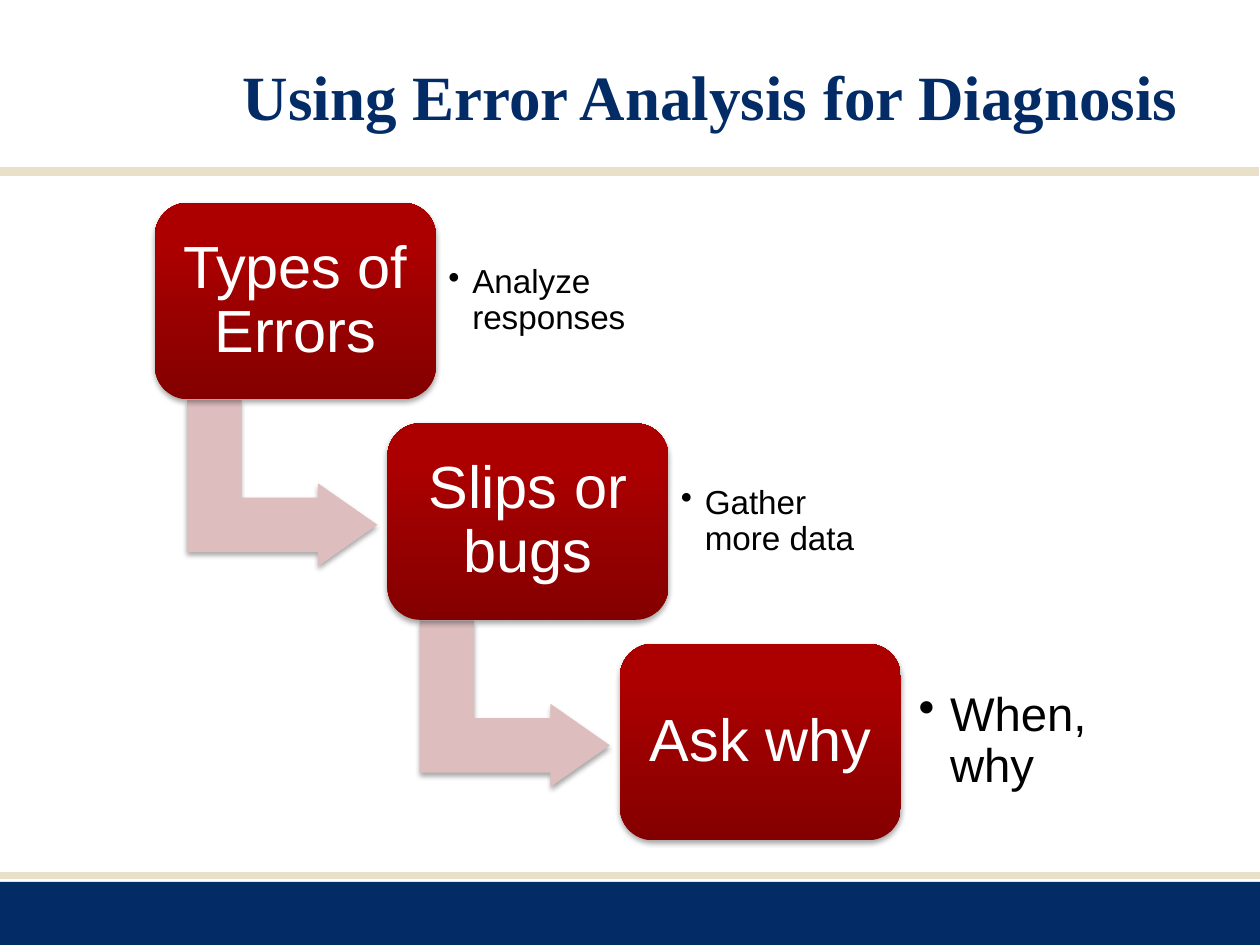
"""Build the error analysis slide: three descending steps joined by bent arrows."""
from lxml import etree
from pptx import Presentation
from pptx import util as u
from pptx.dml.color import RGBColor
from pptx.enum import shapes, text
from pptx.oxml.ns import qn

COLORS = {
    "navy": "032B66",
    "sand": "E8E1C7",
    "dark_red": "840000",
    "red": "AC0000",
    "pink": "DDBDBD",
    "white": "FFFFFF",
    "black": "000000",
}
STEPS = [
    ("Types of Errors", "Analyze responses", 19, 0.1, 0.19),
    ("Slips or bugs", "Gather more data", 19, 0.1, 0.19),
    ("Ask why", "When, why", 27, 0.14, 0.25),
]
FIRST_LEFT, FIRST_TOP = 1.23, 1.61
STEP_X, STEP_Y = 1.845, 1.75
BOX_WIDTH, BOX_HEIGHT = 2.23, 1.56


def color(name):
    return RGBColor.from_string(COLORS[name])


def write(shape, content, size, ink, font="Arial", bold=False, inset=0.1,
          align=text.PP_ALIGN.LEFT, line_spacing=None, bullet_indent=None):
    frame = shape.text_frame
    frame.word_wrap = True
    frame.vertical_anchor = text.MSO_ANCHOR.MIDDLE
    frame.margin_left = frame.margin_right = u.Inches(inset)
    frame.margin_top = frame.margin_bottom = u.Inches(inset)
    paragraph = frame.paragraphs[0]
    paragraph.text = content
    paragraph.alignment = align
    paragraph.line_spacing = line_spacing
    if bullet_indent:
        properties = paragraph._p.get_or_add_pPr()
        properties.set("marL", str(u.Inches(bullet_indent)))
        properties.set("indent", str(-u.Inches(bullet_indent)))
        etree.SubElement(properties, qn("a:buChar"), char="•")
    run_font = paragraph.runs[0].font
    run_font.name = font
    run_font.size = u.Pt(size)
    run_font.bold = bold
    run_font.color.rgb = color(ink)


def add_text(slide, left, top, width, height, content, **style):
    box = slide.shapes.add_textbox(
        u.Inches(left), u.Inches(top), u.Inches(width), u.Inches(height))
    write(box, content, **style)


def add_shape(slide, kind, left, top, width, height, fill=None):
    shape = slide.shapes.add_shape(
        kind, u.Inches(left), u.Inches(top), u.Inches(width), u.Inches(height))
    shape.shadow.inherit = False
    shape.line.fill.background()
    if fill:
        shape.fill.solid()
        shape.fill.fore_color.rgb = color(fill)
    return shape


def add_drop_shadow(shape):
    effects = shape._element.spPr.find(qn("a:effectLst"))
    shadow = etree.SubElement(
        effects, qn("a:outerShdw"), blurRad=str(u.Pt(3.1)),
        dist=str(u.Pt(1.8)), dir="5400000", rotWithShape="0")
    tone = etree.SubElement(shadow, qn("a:srgbClr"), val=COLORS["black"])
    etree.SubElement(tone, qn("a:alpha"), val="35000")


def add_rule(slide, left, top, weight):
    rule = slide.shapes.add_connector(
        shapes.MSO_CONNECTOR.STRAIGHT, u.Inches(left), u.Inches(top),
        u.Inches(left + 10), u.Inches(top))
    rule.line.color.rgb = color("sand")
    rule.line.width = u.Pt(weight)
    etree.SubElement(rule._element.spPr, qn("a:effectLst"))


def add_bent_arrow(slide, left, top):
    arrow = add_shape(slide, shapes.MSO_SHAPE.BENT_UP_ARROW,
                      left, top, 1.32, 1.51, "pink")
    arrow.rotation = 90
    for index, value in enumerate((0.328, 0.25, 0.358)):
        arrow.adjustments[index] = value
    add_drop_shadow(arrow)


def add_step_box(slide, left, top, label):
    box = add_shape(slide, shapes.MSO_SHAPE.ROUNDED_RECTANGLE,
                    left, top, BOX_WIDTH, BOX_HEIGHT)
    box.adjustments[0] = 0.167
    box.fill.gradient()
    box.fill.gradient_angle = 90
    stops = zip(box.fill.gradient_stops, (0, 0.8), ("dark_red", "red"))
    for stop, position, name in stops:
        stop.position = position
        stop.color.rgb = color(name)
    add_drop_shadow(box)
    write(box, label, size=34, ink="white", inset=0.14,
          align=text.PP_ALIGN.CENTER, line_spacing=0.9)


def main():
    presentation = Presentation()
    presentation.slide_width = u.Inches(10)
    presentation.slide_height = u.Inches(7.5)
    slide = presentation.slides.add_slide(presentation.slide_layouts[6])

    add_shape(slide, shapes.MSO_SHAPE.RECTANGLE, 0, 7, 10, 0.5, "navy")
    add_rule(slide, 0, 6.95, 4)
    add_rule(slide, -0.01, 1.36, 5)
    add_text(slide, 1.83, 0.17, 7.67, 1.17, "Using Error Analysis for Diagnosis",
             size=36, ink="navy", font="Times New Roman", bold=True)

    for index, (label, detail, size, inset, indent) in enumerate(STEPS):
        left = FIRST_LEFT + index * STEP_X
        top = FIRST_TOP + index * STEP_Y
        if index < len(STEPS) - 1:
            add_bent_arrow(slide, left + 0.35, top + 1.47)
        add_step_box(slide, left, top, label)
        add_text(slide, left + BOX_WIDTH, top + 0.15, 1.62, 1.26, detail,
                 size=size, ink="black", inset=inset, line_spacing=0.9,
                 bullet_indent=indent)

    presentation.save("out.pptx")


if __name__ == "__main__":
    main()
